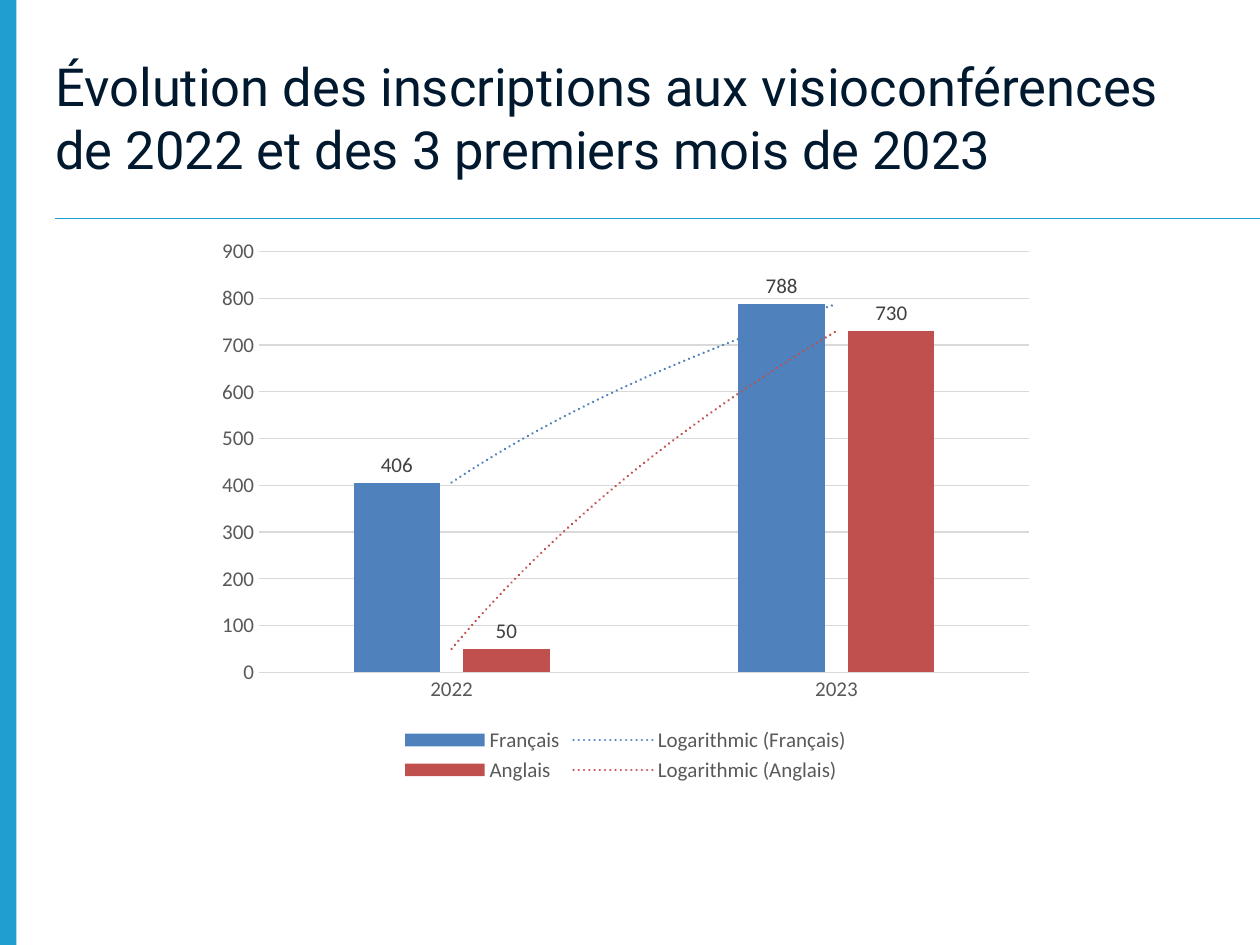
from lxml.etree import SubElement
from pptx import Presentation
from pptx.chart.data import CategoryChartData
from pptx.dml.color import RGBColor
from pptx.enum.chart import XL_CHART_TYPE, XL_LABEL_POSITION, XL_LEGEND_POSITION, XL_TICK_MARK
from pptx.enum.shapes import MSO_CONNECTOR, MSO_SHAPE
from pptx.enum.text import MSO_ANCHOR
from pptx.oxml import parse_xml
from pptx.oxml.ns import nsdecls, qn
from pptx.util import Inches, Pt

COLORS = {
    "accent": "1E9FD0",
    "title": "00192F",
    "axis_text": "595959",
    "label": "404040",
    "grid": "D9D9D9",
    "Français": "4F81BD",
    "Anglais": "C0504D",
}
YEARS = ["2022", "2023"]
REGISTRATIONS = {"Français": [406, 788], "Anglais": [50, 730]}


class SlideBuilder:
    title_font = "Roboto"
    chart_font = "Calibri"

    def __init__(self, slide):
        self.slide = slide

    def rgb(self, name):
        return RGBColor.from_string(COLORS[name])

    def style_font(self, font, face, size, color):
        font.name = face
        font.size = Pt(size)
        font.color.rgb = self.rgb(color)

    def style_line(self, line, color, width):
        line.color.rgb = self.rgb(color)
        line.width = Pt(width)

    def bar(self, x, y, w, h, color):
        sp = self.slide.shapes.add_shape(
            MSO_SHAPE.RECTANGLE, Inches(x), Inches(y), Inches(w), Inches(h))
        sp.shadow.inherit = False
        sp.fill.solid()
        sp.fill.fore_color.rgb = self.rgb(color)
        sp.line.fill.background()

    def rule(self, x1, x2, y, color, width):
        line = self.slide.shapes.add_connector(
            MSO_CONNECTOR.STRAIGHT, Inches(x1), Inches(y), Inches(x2), Inches(y))
        self.style_line(line.line, color, width)
        SubElement(line._element.spPr, qn("a:effectLst"))

    def title(self, text, x, y, w, h):
        tf = self.slide.shapes.add_textbox(
            Inches(x), Inches(y), Inches(w), Inches(h)).text_frame
        tf.word_wrap = True
        tf.vertical_anchor = MSO_ANCHOR.MIDDLE
        r = tf.paragraphs[0].add_run()
        r.text = text
        self.style_font(r.font, self.title_font, 30, "title")

    def log_trend(self, series):
        """Add a dotted logarithmic trend line in the colour of the series."""
        trend = parse_xml(
            f'<c:trendline {nsdecls("c", "a")}><c:spPr><a:ln w="{Pt(1.5)}" cap="rnd">'
            f'<a:solidFill><a:srgbClr val="{COLORS[series.name]}"/></a:solidFill>'
            '<a:prstDash val="sysDot"/></a:ln></c:spPr><c:trendlineType val="log"/>'
            '<c:dispRSqr val="0"/><c:dispEq val="0"/></c:trendline>')
        series._element.find(qn("c:cat")).addprevious(trend)

    def column_chart(self, categories, values, x, y, w, h):
        data = CategoryChartData()
        data.categories = categories
        for name, numbers in values.items():
            data.add_series(name, numbers)
        chart = self.slide.shapes.add_chart(
            XL_CHART_TYPE.COLUMN_CLUSTERED,
            Inches(x), Inches(y), Inches(w), Inches(h), data).chart
        chart.has_title = False
        self.style_font(chart.font, self.chart_font, 12, "axis_text")

        chart.has_legend = True
        chart.legend.position = XL_LEGEND_POSITION.BOTTOM
        chart.legend.include_in_layout = False
        self.style_font(chart.legend.font, self.chart_font, 12, "axis_text")

        for axis in (chart.category_axis, chart.value_axis):
            axis.major_tick_mark = axis.minor_tick_mark = XL_TICK_MARK.NONE
            self.style_font(axis.tick_labels.font, self.chart_font, 12, "axis_text")
        self.style_line(chart.category_axis.format.line, "grid", 0.75)
        value_axis = chart.value_axis
        value_axis.minimum_scale, value_axis.maximum_scale = 0, 900
        value_axis.major_unit = 100
        value_axis.format.line.fill.background()
        self.style_line(value_axis.major_gridlines.format.line, "grid", 0.75)

        plot = chart.plots[0]
        plot.gap_width, plot.overlap = 219, -27
        plot.vary_by_categories = False
        for series in plot.series:
            series.format.fill.solid()
            series.format.fill.fore_color.rgb = self.rgb(series.name)
            series.invert_if_negative = False
            labels = series.data_labels
            labels.show_value = True
            labels.position = XL_LABEL_POSITION.OUTSIDE_END
            self.style_font(labels.font, self.chart_font, 12, "label")
            self.log_trend(series)


def main():
    prs = Presentation()
    prs.slide_width, prs.slide_height = Inches(10), Inches(7.5)
    s = SlideBuilder(prs.slides.add_slide(prs.slide_layouts[6]))
    s.bar(0, 0, 0.13, 7.5, "accent")
    s.rule(10, 0.44, 1.73, "accent", 0.5)
    s.title("Évolution des inscriptions aux visioconférences de 2022 "
            "et des 3 premiers mois de 2023", 0.34, 0.3, 9.26, 1.25)
    s.column_chart(YEARS, REGISTRATIONS, 1.63, 1.81, 6.67, 4.44)
    prs.save("out.pptx")


if __name__ == "__main__":
    main()
